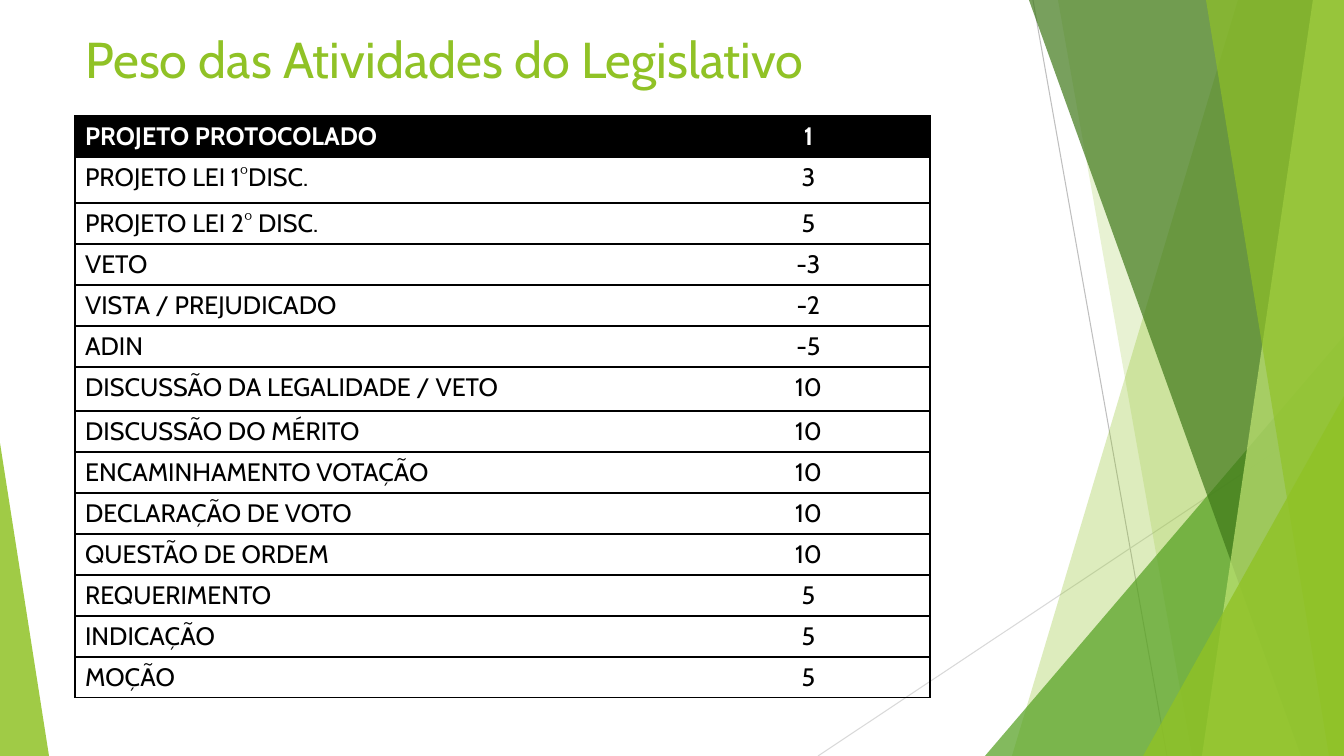
from lxml.etree import SubElement
from pptx import Presentation
from pptx.dml.color import RGBColor
from pptx.enum.shapes import MSO_CONNECTOR, MSO_SHAPE
from pptx.enum.text import MSO_ANCHOR, PP_ALIGN
from pptx.oxml.ns import qn
from pptx.util import Emu, Pt

EMU_PER_PX = 914400 / 100.8
WIDTH, HEIGHT = 1344, 756
LIME, GREEN, FOREST, PALE = "90C226", "54A021", "3F7819", "C0E474"
BLACK, WHITE = "000000", "FFFFFF"

WEIGHTS = [
    ("PROJETO PROTOCOLADO", "1"),
    ("PROJETO LEI 1°DISC.", "3"),
    ("PROJETO LEI 2° DISC.", "5"),
    ("VETO", "-3"),
    ("VISTA / PREJUDICADO", "-2"),
    ("ADIN", "-5"),
    ("DISCUSSÃO DA LEGALIDADE / VETO", "10"),
    ("DISCUSSÃO DO MÉRITO", "10"),
    ("ENCAMINHAMENTO VOTAÇÃO", "10"),
    ("DECLARAÇÃO DE VOTO", "10"),
    ("QUESTÃO DE ORDEM", "10"),
    ("REQUERIMENTO", "5"),
    ("INDICAÇÃO", "5"),
    ("MOÇÃO", "5"),
]
ROW_HEIGHT = 41
TALL_ROWS = {1: 46, 6: 44}


def px(length):
    return Emu(round(length * EMU_PER_PX))


def colour(hex_string):
    return RGBColor.from_string(hex_string)


def assign(target, values):
    for name, value in values.items():
        setattr(target, name, value)


class Deck:
    font = "Cabin"

    def __init__(self):
        self.presentation = Presentation()
        assign(self.presentation, {"slide_width": px(WIDTH), "slide_height": px(HEIGHT)})
        self.slide = self.presentation.slides.add_slide(self.presentation.slide_layouts[5])

    def put_text(self, frame, text, size, hex_string, bold=False, align=PP_ALIGN.LEFT):
        paragraph = frame.paragraphs[0]
        paragraph.alignment = align
        run = paragraph.add_run()
        run.text = text
        assign(run.font, {"name": self.font, "size": Pt(size), "bold": bold})
        run.font.color.rgb = colour(hex_string)

    def title(self, text, left, top, width, height):
        heading = self.slide.shapes.title
        assign(heading, {"left": px(left), "top": px(top),
                         "width": px(width), "height": px(height)})
        assign(heading.text_frame, {"vertical_anchor": MSO_ANCHOR.TOP, "word_wrap": True})
        self.put_text(heading.text_frame, text, 36, LIME)

    def line(self, start, end, hex_string):
        ray = self.slide.shapes.add_connector(
            MSO_CONNECTOR.STRAIGHT, *map(px, start + end))
        ray.line.color.rgb = colour(hex_string)
        ray.line.width = Pt(0.75)
        SubElement(ray._element.spPr, qn("a:effectLst"))

    def paint(self, facet, hex_string, opacity):
        facet.shadow.inherit = False
        facet.line.fill.background()
        facet.fill.solid()
        facet.fill.fore_color.rgb = colour(hex_string)
        tint = facet._element.spPr.find(qn("a:solidFill"))[0]
        SubElement(tint, qn("a:alpha"), val=str(opacity * 1000))

    def band(self, top_x, bottom_x, hex_string, opacity):
        """Full-height facet between a slanted left edge and the slide's right edge."""
        outline = self.slide.shapes.build_freeform(top_x, 0, scale=EMU_PER_PX)
        outline.add_line_segments(
            [(WIDTH, 0), (WIDTH, HEIGHT), (bottom_x, HEIGHT)], close=True)
        self.paint(outline.convert_to_shape(), hex_string, opacity)

    def triangle(self, left, top, width, apex, hex_string, opacity):
        """Triangle standing on the slide's bottom edge."""
        facet = self.slide.shapes.add_shape(
            MSO_SHAPE.ISOSCELES_TRIANGLE, *map(px, (left, top, width, HEIGHT - top)))
        facet.adjustments[0] = apex
        self.paint(facet, hex_string, opacity)

    def border(self, cell, sides):
        properties = cell._tc.get_or_add_tcPr()
        for side in "LRTB":
            edge = SubElement(properties, qn(f"a:ln{side}"), w=str(Pt(1)))
            if side in sides:
                fill = SubElement(edge, qn("a:solidFill"))
                SubElement(fill, qn("a:srgbClr"), val=BLACK)
            else:
                SubElement(edge, qn("a:noFill"))

    def table(self, rows, left, top, widths):
        heights = [TALL_ROWS.get(i, ROW_HEIGHT) for i in range(len(rows))]
        grid = self.slide.shapes.add_table(
            len(rows), len(widths),
            *map(px, (left, top, sum(widths), sum(heights)))).table
        grid.horz_banding = False
        for column, width in zip(grid.columns, widths):
            column.width = px(width)
        for i, (row, height) in enumerate(zip(rows, heights)):
            grid.rows[i].height = px(height)
            header = i == 0
            for j, text in enumerate(row):
                cell = grid.cell(i, j)
                self.border(cell, "RTB" if j else "LTB")
                if header:
                    cell.fill.solid()
                    cell.fill.fore_color.rgb = colour(BLACK)
                else:
                    cell.fill.background()
                self.put_text(cell.text_frame, text, 18, WHITE if header else BLACK,
                              header, PP_ALIGN.CENTER if j else PP_ALIGN.LEFT)


def main():
    deck = Deck()

    # Faceted backdrop, back to front
    deck.line((1033, 0), (1167, HEIGHT), "BFBFBF")
    deck.line((WIDTH, 406), (818, HEIGHT), "D9D9D9")
    deck.band(1238, 1012, LIME, 30)
    deck.band(1058, 1192, LIME, 20)
    deck.triangle(985, 336, 359, 1, GREEN, 72)
    deck.band(1029, 1301, FOREST, 70)
    deck.band(1313, 1202, PALE, 70)
    deck.band(1206, 1329, LIME, 65)
    deck.triangle(1143, 396, 201, 1, LIME, 80)
    deck.triangle(0, 443, 49, 0, LIME, 85)

    # Title and table of weights
    deck.title("Peso das Atividades do Legislativo", 75, 23, 947, 94)
    deck.table(WEIGHTS, 75, 116, (612, 243))

    deck.presentation.save("out.pptx")


if __name__ == "__main__":
    main()
